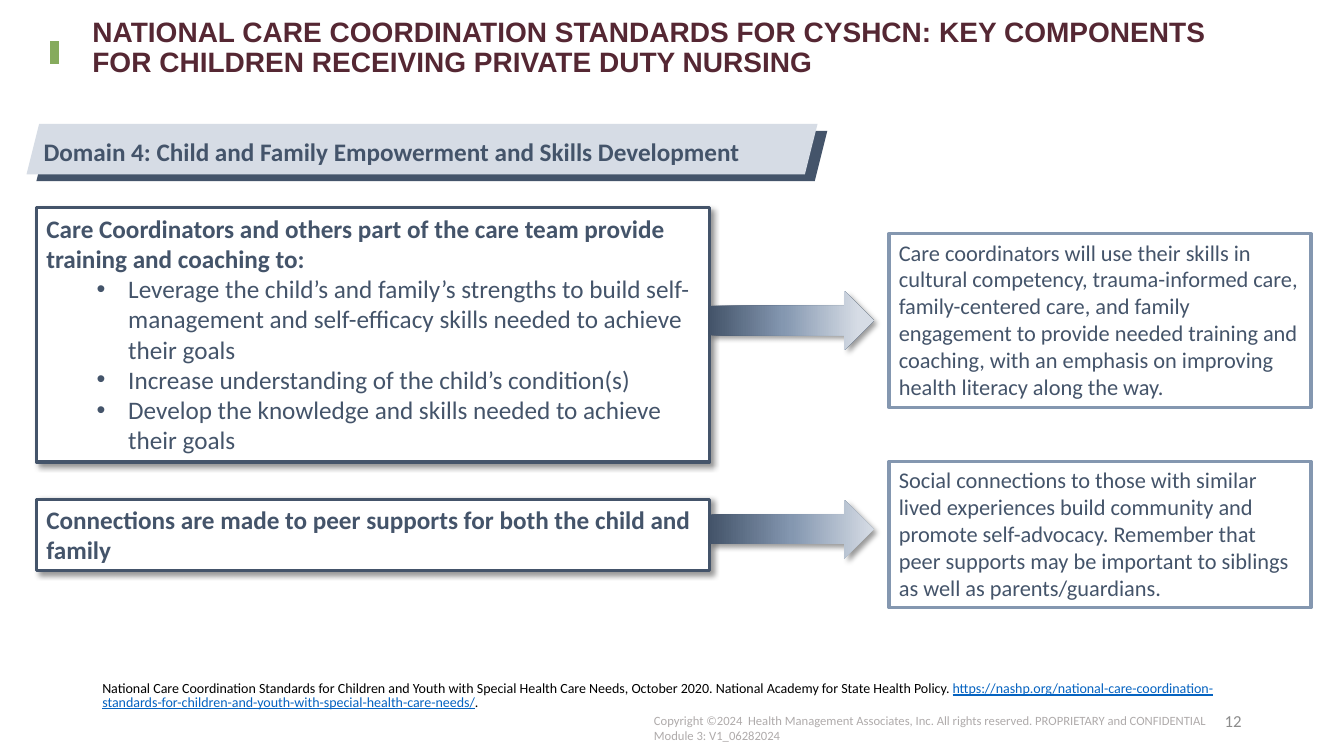
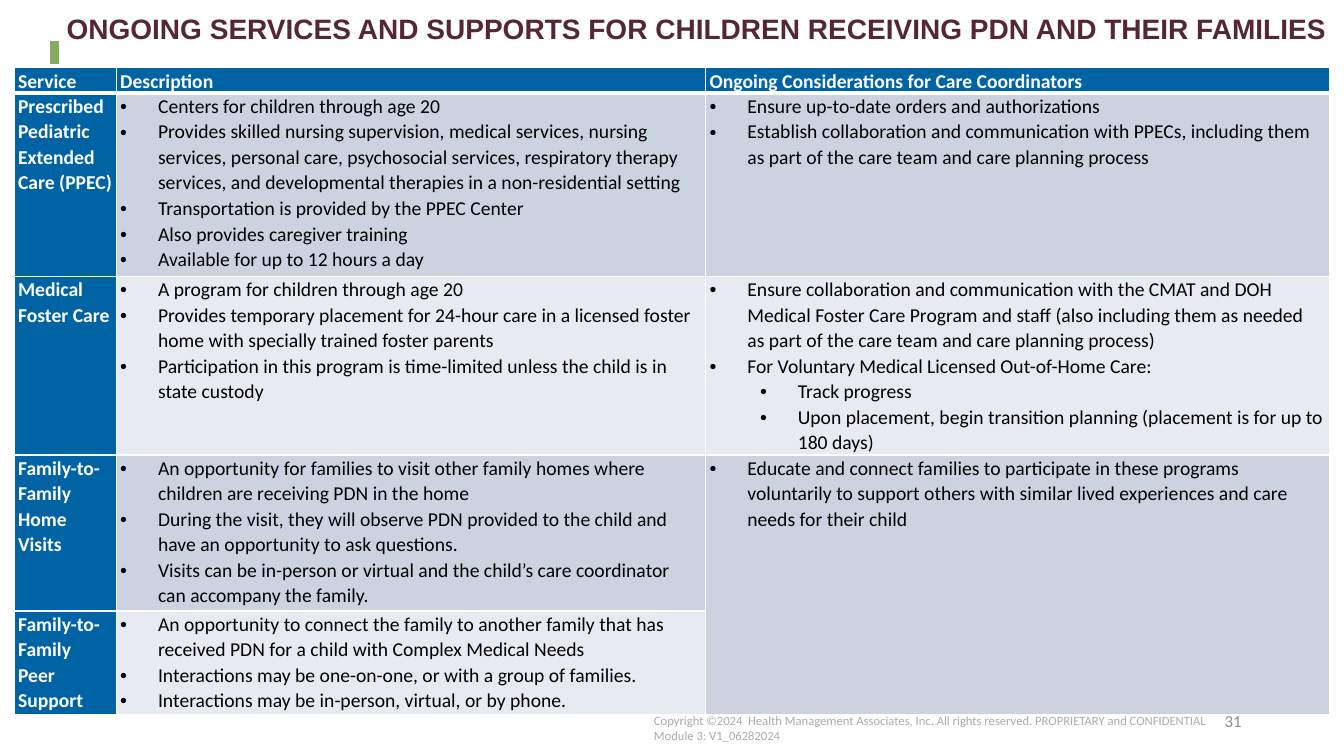
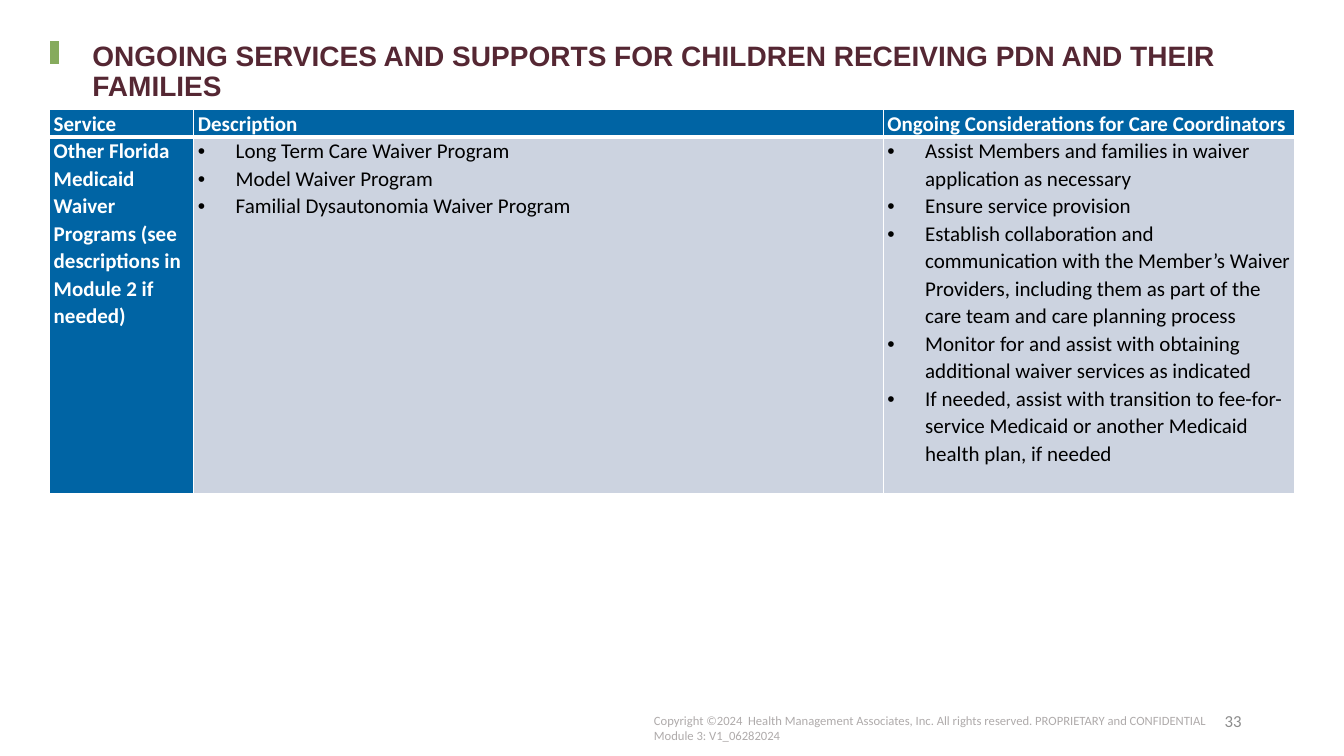
import pptx
import pptx.util
import pptx.dml.color
import pptx.enum.shapes
import pptx.enum.text
import pptx.oxml
import pptx.oxml.ns

Pt = pptx.util.Pt
SHAPE = pptx.enum.shapes.MSO_SHAPE
ALIGN = pptx.enum.text.PP_ALIGN
ANCHOR = pptx.enum.text.MSO_ANCHOR

COLORS = {
    "title": "552733", "accent": "86AB5D", "footer": "AFABAB", "number": "8C8C8C",
    "slate": "44546A", "steel": "8497B0", "mist": "D6DCE5",
    "header": "0064A4", "band_dark": "CCD3E0", "band_light": "E7EAF0",
    "white": "FFFFFF", "black": "000000", "link": "0563C1",
}
NAMESPACE = 'xmlns:a="http://schemas.openxmlformats.org/drawingml/2006/main"'
COPYRIGHT = [
    "Copyright ©2024  Health Management Associates, Inc. All rights reserved. PROPRIETARY and CONFIDENTIAL",
    "Module 3: V1_06282024",
]
SERVICES_TITLE = "ONGOING SERVICES AND SUPPORTS FOR CHILDREN RECEIVING PDN AND THEIR FAMILIES"
TABLE_HEADER = ["Service", "Description", "Ongoing Considerations for Care Coordinators"]

SERVICES = [
    ["Prescribed Pediatric Extended Care (PPEC)",
     ["Centers for children through age 20",
      "Provides skilled nursing supervision, medical services, nursing services, personal care, "
      "psychosocial services, respiratory therapy services, and developmental therapies in a "
      "non-residential setting",
      "Transportation is provided by the PPEC Center",
      "Also provides caregiver training",
      "Available for up to 12 hours a day"],
     ["Ensure up-to-date orders and authorizations",
      "Establish collaboration and communication with PPECs, including them as part of the care "
      "team and care planning process"]],
    ["Medical Foster Care",
     ["A program for children through age 20",
      "Provides temporary placement for 24-hour care in a licensed foster home with specially "
      "trained foster parents",
      "Participation in this program is time-limited unless the child is in state custody"],
     ["Ensure collaboration and communication with the CMAT and DOH Medical Foster Care Program "
      "and staff (also including them as needed as part of the care team and care planning process)",
      "For Voluntary Medical Licensed Out-of-Home Care:",
      ["Track progress",
       "Upon placement, begin transition planning (placement is for up to 180 days)"]]],
    ["Family-to-Family Home Visits",
     ["An opportunity for families to visit other family homes where children are receiving PDN "
      "in the home",
      "During the visit, they will observe PDN provided to the child and have an opportunity to "
      "ask questions.",
      "Visits can be in-person or virtual and the child’s care coordinator can accompany the family."],
     ["Educate and connect families to participate in these programs voluntarily to support "
      "others with similar lived experiences and care needs for their child"]],
    ["Family-to-Family Peer Support",
     ["An opportunity to connect the family to another family that has received PDN for a child "
      "with Complex Medical Needs",
      "Interactions may be one-on-one, or with a group of families.",
      "Interactions may be in-person, virtual, or by phone."],
     None],
]

WAIVERS = [
    ["Other Florida Medicaid Waiver Programs (see descriptions in Module 2 if needed)",
     ["Long Term Care Waiver Program",
      "Model Waiver Program",
      "Familial Dysautonomia Waiver Program"],
     ["Assist Members and families in waiver application as necessary",
      "Ensure service provision",
      "Establish collaboration and communication with the Member’s Waiver Providers, including "
      "them as part of the care team and care planning process",
      "Monitor for and assist with obtaining additional waiver services as indicated",
      "If needed, assist with transition to fee-for-service Medicaid or another Medicaid health "
      "plan, if needed"]],
]


def rgb(name):
    return pptx.dml.color.RGBColor.from_string(COLORS[name])


def add_xml(parent, markup):
    parent.append(pptx.oxml.parse_xml(markup))


def points(*lengths):
    return [Pt(length) for length in lengths]


def style(para, size, color, bold=False, face="Calibri", spacing=None, align=ALIGN.LEFT):
    para.alignment = align
    if spacing:
        para.line_spacing = spacing
    font = para.font
    font.name, font.size, font.bold = face, Pt(size), bold
    font.color.rgb = rgb(color)


def add_para(frame):
    return frame.add_paragraph() if frame.paragraphs[0].runs else frame.paragraphs[0]


def add_bullet(frame, text, size, color, left, hang, spacing=None):
    para = add_para(frame)
    para.text = text
    properties = para._p.get_or_add_pPr()
    properties.set("marL", str(Pt(left)))
    properties.set("indent", str(-Pt(hang)))
    add_xml(properties, f'<a:buFont {NAMESPACE} typeface="Arial"/>')
    add_xml(properties, f'<a:buChar {NAMESPACE} char="•"/>')
    style(para, size, color, spacing=spacing)


def add_text(page, bounds, lines, size, color, anchor=ANCHOR.TOP, **options):
    box = page.shapes.add_textbox(*points(*bounds))
    frame = box.text_frame
    frame.word_wrap = True
    frame.vertical_anchor = anchor
    for line in lines:
        para = add_para(frame)
        para.text = line
        style(para, size, color, **options)
    return box


def add_shadow(shape):
    effects = shape._element.spPr.find(pptx.oxml.ns.qn("a:effectLst"))
    add_xml(effects, f'<a:outerShdw {NAMESPACE} blurRad="{Pt(4)}" dist="{Pt(3)}" dir="2700000" '
                     'algn="tl" rotWithShape="0"><a:srgbClr val="000000">'
                     '<a:alpha val="40000"/></a:srgbClr></a:outerShdw>')


def add_panel(page, kind, bounds, fill=None, line=None):
    shape = page.shapes.add_shape(kind, *points(*bounds))
    shape.shadow.inherit = False
    if fill:
        shape.fill.solid()
        shape.fill.fore_color.rgb = rgb(fill)
    else:
        shape.fill.background()
    if line:
        shape.line.color.rgb = rgb(line)
        shape.line.width = Pt(2.25)
    else:
        shape.line.fill.background()
    return shape


def add_page(deck, title, bounds, number):
    page = deck.slides.add_slide(deck.slide_layouts[5])
    add_text(page, (460, 505.5, 413.5, 29), COPYRIGHT, 9, "footer")
    marker = page.shapes.add_connector(
        pptx.enum.shapes.MSO_CONNECTOR.STRAIGHT, *points(39, 29.5, 39, 45.5))
    marker.line.color.rgb = rgb("accent")
    marker.line.width = Pt(7)
    add_xml(marker._element.spPr, f"<a:effectLst {NAMESPACE}/>")
    add_text(page, (678, 500.5, 216, 29), [str(number)], 12, "number",
             ANCHOR.MIDDLE, align=ALIGN.RIGHT)
    heading = page.shapes.title
    heading.left, heading.top, heading.width, heading.height = points(*bounds)
    frame = heading.text_frame
    frame.text = title
    frame.word_wrap = True
    frame.auto_size = pptx.enum.text.MSO_AUTO_SIZE.NONE
    frame.vertical_anchor = ANCHOR.TOP
    frame.margin_left = frame.margin_top = frame.margin_right = frame.margin_bottom = 0
    style(frame.paragraphs[0], 20, "title", True, "Arial", 0.9)
    return page


def add_banner(page, left, top, text):
    width, height = 565, 36
    add_panel(page, SHAPE.PARALLELOGRAM, (left + 7, top + 5, width, height), "slate")
    add_panel(page, SHAPE.PARALLELOGRAM, (left, top, width, height), "mist")
    add_text(page, (left + 5, top + 5, width - 32, 29), [text], 18, "slate", bold=True)


def add_action(page, bounds, lead, bullets=()):
    box = add_panel(page, SHAPE.RECTANGLE, bounds, "white", "slate")
    add_shadow(box)
    frame = box.text_frame
    frame.word_wrap = True
    frame.vertical_anchor = ANCHOR.TOP
    frame.text = lead
    style(frame.paragraphs[0], 18, "slate", True)
    for text in bullets:
        add_bullet(frame, text, 18, "slate", 58.5, 22.5)


def add_gradient_arrow(page, left, top, stops):
    arrow = page.shapes.add_shape(SHAPE.RIGHT_ARROW, *points(left, top, 117, 42))
    marks = "".join(f'<a:gs pos="{stop * 1000}"><a:srgbClr val="{COLORS[name]}"/></a:gs>'
                    for stop, name in zip(stops, ("slate", "steel", "mist")))
    add_xml(arrow._element.spPr, f'<a:gradFill {NAMESPACE} rotWithShape="1"><a:gsLst>{marks}'
                                 '</a:gsLst><a:lin ang="0" scaled="0"/></a:gradFill>')
    arrow.line.fill.background()
    arrow.shadow.inherit = False
    add_shadow(arrow)


def add_outcome(page, bounds, text):
    box = add_panel(page, SHAPE.RECTANGLE, bounds, line="steel")
    frame = box.text_frame
    frame.word_wrap = True
    frame.vertical_anchor = ANCHOR.TOP
    frame.text = text
    style(frame.paragraphs[0], 16, "slate")


def add_citation(page, bounds):
    box = page.shapes.add_textbox(*points(*bounds))
    frame = box.text_frame
    frame.word_wrap = True
    frame.vertical_anchor = ANCHOR.BOTTOM
    para = frame.paragraphs[0]
    style(para, 10, "black", spacing=0.8)
    for text, is_link in (
        ("National Care Coordination Standards for Children and Youth with Special Health Care "
         "Needs, October 2020. National Academy for State Health Policy. ", False),
        ("https://nashp.org/national-care-coordination-standards-for-children-and-youth-with-"
         "special-health-care-needs/", True),
        (".", False),
    ):
        span = para.add_run()
        span.text = text
        if is_link:
            span.font.color.rgb = rgb("link")
            span.font.underline = True


def set_borders(cell, row):
    properties = cell._tc.get_or_add_tcPr()
    widths = {"L": 1, "R": 1, "T": 3 if row == 1 else 1, "B": 3 if row == 0 else 1}
    for side, width in widths.items():
        add_xml(properties, f'<a:ln{side} {NAMESPACE} w="{Pt(width)}"><a:solidFill>'
                            f'<a:srgbClr val="{COLORS["white"]}"/></a:solidFill></a:ln{side}>')


def fill_cell(cell, content, size):
    frame = cell.text_frame
    if isinstance(content, str):
        frame.text = content
        style(frame.paragraphs[0], size, "white", True, spacing=1.07)
        return
    for item in content or ():
        nested = isinstance(item, list)
        for text in item if nested else [item]:
            add_bullet(frame, text, size, "black", 63 if nested else 27, 27, 1.07)


def add_service_table(page, left, top, widths, heights, services, size):
    rows = [TABLE_HEADER] + services
    table = page.shapes.add_table(len(rows), len(widths), *points(
        left, top, sum(widths), sum(heights))).table
    for column, width in zip(table.columns, widths):
        column.width = Pt(width)
    for row, (height, contents) in enumerate(zip(heights, rows)):
        table.rows[row].height = Pt(height)
        for column, content in enumerate(contents):
            cell = table.cell(row, column)
            cell.margin_left = cell.margin_right = Pt(2.9)
            cell.margin_top = cell.margin_bottom = 0
            set_borders(cell, row)
            band = "band_dark" if row % 2 else "band_light"
            cell.fill.solid()
            cell.fill.fore_color.rgb = rgb("header" if row == 0 or column == 0 else band)
            if content is None:
                table.cell(row - 1, column).merge(cell)
            else:
                fill_cell(cell, content, size)


def build_domain_page(deck):
    page = add_page(deck, "NATIONAL CARE COORDINATION STANDARDS FOR CYSHCN: KEY COMPONENTS "
                          "FOR CHILDREN RECEIVING PRIVATE DUTY NURSING", (66, 13, 828, 44), 12)
    add_banner(page, 19, 88.5, "Domain 4: Child and Family Empowerment and Skills Development")
    add_action(page, (26, 148.5, 481, 181.5),
               "Care Coordinators and others part of the care team provide training and coaching to:",
               ["Leverage the child’s and family’s strengths to build self-management and "
                "self-efficacy skills needed to achieve their goals",
                "Increase understanding of the child’s condition(s)",
                "Develop the knowledge and skills needed to achieve their goals"])
    add_gradient_arrow(page, 507, 208, (0, 45, 91))
    add_outcome(page, (635, 167, 301.5, 124),
                "Care coordinators will use their skills in cultural competency, trauma-informed "
                "care, family-centered care, and family engagement to provide needed training and "
                "coaching, with an emphasis on improving health literacy along the way.")
    add_action(page, (26, 356.5, 481, 51),
               "Connections are made to peer supports for both the child and family")
    add_gradient_arrow(page, 507, 357, (0, 50, 100))
    add_outcome(page, (635, 329.5, 301.5, 104.5),
                "Social connections to those with similar lived experiences build community and "
                "promote self-advocacy. Remember that peer supports may be important to siblings "
                "as well as parents/guardians.")
    add_citation(page, (66, 481.5, 828, 29))


def build_services_page(deck):
    page = add_page(deck, SERVICES_TITLE, (47.5, 11, 902, 66), 31)
    add_service_table(page, 10, 48.5, (73, 421, 445.5), (18, 131, 127.5, 111.5, 74),
                      SERVICES, 14)


def build_waivers_page(deck):
    page = add_page(deck, SERVICES_TITLE, (66, 30, 828, 66), 33)
    add_service_table(page, 35.5, 78.5, (103, 492.5, 293.5), (19, 255), WAIVERS, 15)


def main():
    deck = pptx.Presentation()
    deck.slide_width, deck.slide_height = points(960, 540)
    build_domain_page(deck)
    build_services_page(deck)
    build_waivers_page(deck)
    deck.save("out.pptx")


if __name__ == "__main__":
    main()
